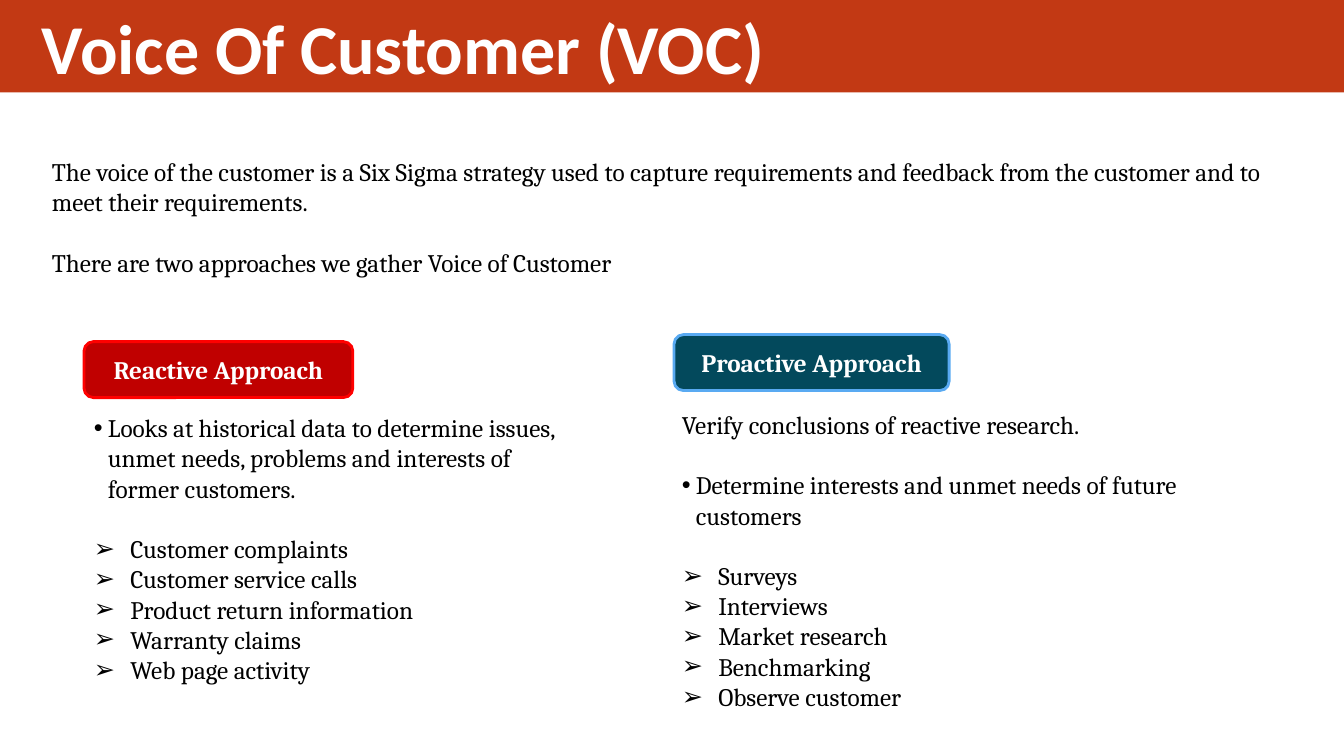
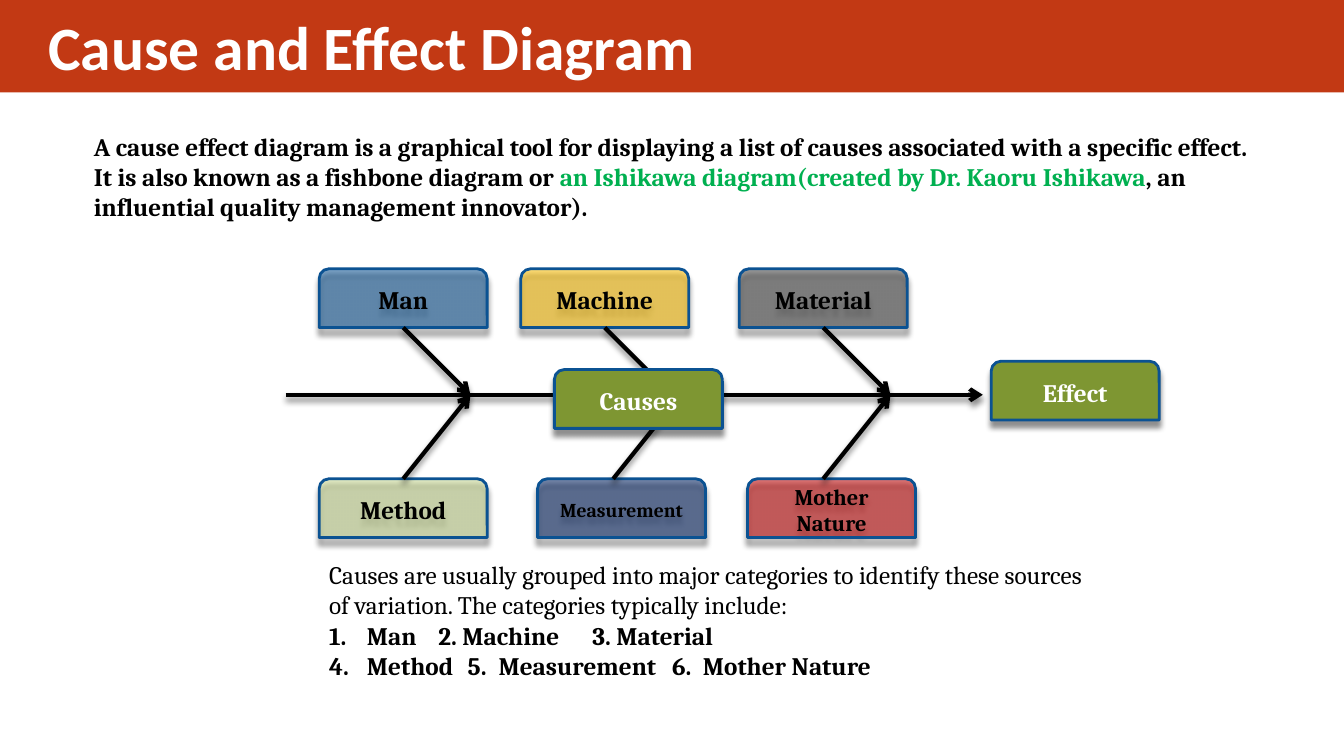
"""Build two quality management slides: voice of the customer and a fishbone diagram."""
import pptx
import pptx.dml.color
import pptx.enum.shapes
import pptx.enum.text
import pptx.oxml
import pptx.oxml.ns
import pptx.util
from lxml import etree

Pt = pptx.util.Pt
qn = pptx.oxml.ns.qn
SHAPE = pptx.enum.shapes.MSO_SHAPE
ALIGN = pptx.enum.text.PP_ALIGN
ANCHOR = pptx.enum.text.MSO_ANCHOR


def rgb(value):
    return pptx.dml.color.RGBColor.from_string(value)


class Deck:
    BAND, WHITE, BLACK, GREEN = "C23914", "FFFFFF", "000000", "00B050"
    HEAD_FONT, BODY_FONT = "Calibri", "Cambria"
    SIZE, BLANK = 18, 21.6

    def __init__(self):
        self.prs = pptx.Presentation()
        self.prs.slide_width, self.prs.slide_height = Pt(960), Pt(540)
        self.layout = self.prs.slide_layouts[5]
        self.s = None

    def slide(self, title, left, bottom, size):
        first = self.s is None
        self.s = self.prs.slides.add_slide(self.layout)
        if first:
            band = self.shape(SHAPE.RECTANGLE, 0, 0, 960, 66, self.BAND)
            self.layout.shapes.element.insert(2, band.element)
        sp = self.s.shapes.title
        sp.left, sp.top, sp.width, sp.height = Pt(left), Pt(bottom - 90), Pt(648), Pt(90)
        tf = sp.text_frame
        tf.margin_left = tf.margin_right = tf.margin_bottom = 0
        tf.margin_top = Pt(3.6)
        tf.vertical_anchor = ANCHOR.BOTTOM
        tf.auto_size = pptx.enum.text.MSO_AUTO_SIZE.NONE
        tf.text = title
        tf.paragraphs[0].alignment = ALIGN.LEFT
        self.format(tf.paragraphs[0], size, self.WHITE, True, self.HEAD_FONT)

    def format(self, p, size=SIZE, color=BLACK, bold=False, font=BODY_FONT):
        for r in p.runs:
            r.font.name, r.font.size, r.font.bold = font, Pt(size), bold
            r.font.color.rgb = rgb(color)

    def shape(self, kind, x, y, w, h, fill, line=None):
        sp = self.s.shapes.add_shape(kind, Pt(x), Pt(y), Pt(w), Pt(h))
        sp.shadow.inherit = False
        sp.fill.solid()
        sp.fill.fore_color.rgb = rgb(fill)
        if line:
            sp.line.color.rgb = rgb(line)
            sp.line.width = Pt(2)
        else:
            sp.line.fill.background()
        return sp

    def label(self, sp, text, size=SIZE, color=WHITE):
        tf = sp.text_frame
        tf.text = text
        tf.word_wrap = True
        tf.vertical_anchor = ANCHOR.MIDDLE
        for p in tf.paragraphs:
            p.alignment = ALIGN.CENTER
            self.format(p, size, color, True)

    def badge(self, x, y, w, text, fill, line):
        self.label(self.shape(SHAPE.ROUNDED_RECTANGLE, x, y, w, 40, fill, line), text)

    def shadow(self, sp, alpha, blur, dist):
        spPr = sp.element.spPr
        effects = spPr.find(qn("a:effectLst"))
        if effects is None:
            effects = etree.SubElement(spPr, qn("a:effectLst"))
        outer = etree.SubElement(effects, qn("a:outerShdw"), blurRad=str(Pt(blur)),
                                 dist=str(Pt(dist)), dir="5400000", rotWithShape="0")
        color = etree.SubElement(outer, qn("a:srgbClr"), val=self.BLACK)
        etree.SubElement(color, qn("a:alpha"), val=str(alpha * 1000))

    def card(self, x, y, text, fill, size=SIZE, color=WHITE, alpha=None):
        sp = self.shape(SHAPE.ROUND_2_SAME_RECTANGLE, x, y, 120, 42, fill, "0B5292")
        if alpha:
            clr = sp.element.spPr.find(qn("a:solidFill")).find(qn("a:srgbClr"))
            etree.SubElement(clr, qn("a:alpha"), val=str(alpha * 1000))
        self.shadow(sp, 43, 4, 5)
        self.label(sp, text, size, color)

    def arrow(self, x1, y1, x2, y2):
        con = self.s.shapes.add_connector(
            pptx.enum.shapes.MSO_CONNECTOR.STRAIGHT, Pt(x1), Pt(y1), Pt(x2), Pt(y2))
        con.line.color.rgb = rgb(self.BLACK)
        con.line.width = Pt(3)
        etree.SubElement(con.line._get_or_add_ln(), qn("a:tailEnd"), type="arrow")
        self.shadow(con, 48, 4.5, 3)

    def text(self, x, y, w, h, *paragraphs):
        tf = self.s.shapes.add_textbox(Pt(x), Pt(y), Pt(w), Pt(h)).text_frame
        tf.word_wrap = True
        for i, text in enumerate(paragraphs):
            p = tf.add_paragraph() if i else tf.paragraphs[0]
            p.text = text
            self.format(p)
        return tf.paragraphs

    def bullet(self, p, char, indent):
        pPr = p._p.get_or_add_pPr()
        pPr.set("marL", str(Pt(indent)))
        pPr.set("indent", str(-Pt(indent)))
        etree.SubElement(pPr, qn("a:buFont"), typeface="Arial")
        etree.SubElement(pPr, qn("a:buChar"), char=char)

    def tabs(self, p, stops):
        tab_list = etree.SubElement(p._p.get_or_add_pPr(), qn("a:tabLst"))
        for stop in stops:
            etree.SubElement(tab_list, qn("a:tab"), pos=str(Pt(stop)), algn="l")

    def approach(self, x, y, w, h, lead, point, items):
        paragraphs = self.text(x, y, w, h, *lead, point, *items)
        n = len(lead)
        self.bullet(paragraphs[n], "•", 10)
        if n:
            paragraphs[n].space_before = Pt(self.BLANK)
        for p in paragraphs[n + 1:]:
            self.bullet(p, "➢", 26)
        paragraphs[n + 1].space_before = Pt(self.BLANK)


def voice_of_customer(deck):
    deck.slide("Voice Of Customer (VOC)", 30, 63, 50)
    intro = deck.text(
        30, 108, 888, 94,
        "The voice of the customer is a Six Sigma strategy used to capture requirements "
        "and feedback from the customer and to meet their requirements.",
        "There are two approaches we gather Voice of Customer")
    intro[1].space_before = Pt(deck.BLANK)
    deck.badge(60, 244, 192, "Reactive Approach", "C00000", "FF0000")
    deck.badge(481.5, 239, 196.5, "Proactive Approach", "03495C", "59AAF2")
    deck.approach(
        60, 291, 384, 204, [],
        "Looks at historical data to determine issues,\v"
        "unmet needs, problems and interests of\vformer customers.",
        ["Customer complaints", "Customer service calls", "Product return information",
         "Warranty claims", "Web page activity"])
    deck.approach(
        480, 288.7, 390, 225, ["Verify conclusions of reactive research."],
        "Determine interests and unmet needs of future\vcustomers",
        ["Surveys", "Interviews", "Market research", "Benchmarking", "Observe customer"])


def cause_and_effect(deck):
    deck.slide("Cause and Effect Diagram", 34.5, 59, 44)
    p = deck.text(
        60, 90, 846, 73,
        "A cause effect diagram is a graphical tool for displaying a list of causes "
        "associated with a specific effect. It is also known as a fishbone diagram or ")[0]
    for text in ("an Ishikawa diagram(created by Dr. Kaoru Ishikawa",
                 ", an influential quality management innovator)."):
        p.add_run().text = text
    deck.format(p, bold=True)
    p.runs[1].font.color.rgb = rgb(deck.GREEN)

    upper, spine, lower = 192, 282, 342
    causes = [
        (228, upper, "Man", "0B5394", 18),
        (372, upper, "Machine", "FFC000", 18),
        (528, upper, "Material", "404040", 18),
        (228, lower, "Method", "C9DA92", 18),
        (384, lower, "Measurement", "002060", 14),
        (534, lower, "Mother\nNature", "C00000", 16),
    ]
    for x, y, text, fill, size in causes:
        deck.card(x, y, text, fill, size, deck.BLACK, 54)
    deck.arrow(204, spine, 702, spine)
    for y, starts in ((lower, (288, 438, 588)), (upper + 42, (288, 432, 588))):
        for x in starts:
            deck.arrow(x, y, x + 48, spine)
    deck.card(396, 264, "Causes", "7E9632")
    deck.card(708, 258, "Effect", "7E9632")

    notes = deck.text(
        228, 396, 564, 94,
        "Causes are usually grouped into major categories to identify these sources "
        "of variation. The categories typically include:",
        "1.\tMan\t2. Machine\t3. Material",
        "4.\tMethod\t5.\tMeasurement\t6.\tMother Nature")
    for p, stops in zip(notes[1:], ((27, 78, 188), (27, 99, 121, 245, 267))):
        deck.tabs(p, stops)
        deck.format(p, bold=True)


def main():
    deck = Deck()
    voice_of_customer(deck)
    cause_and_effect(deck)
    deck.prs.save("out.pptx")


if __name__ == "__main__":
    main()
